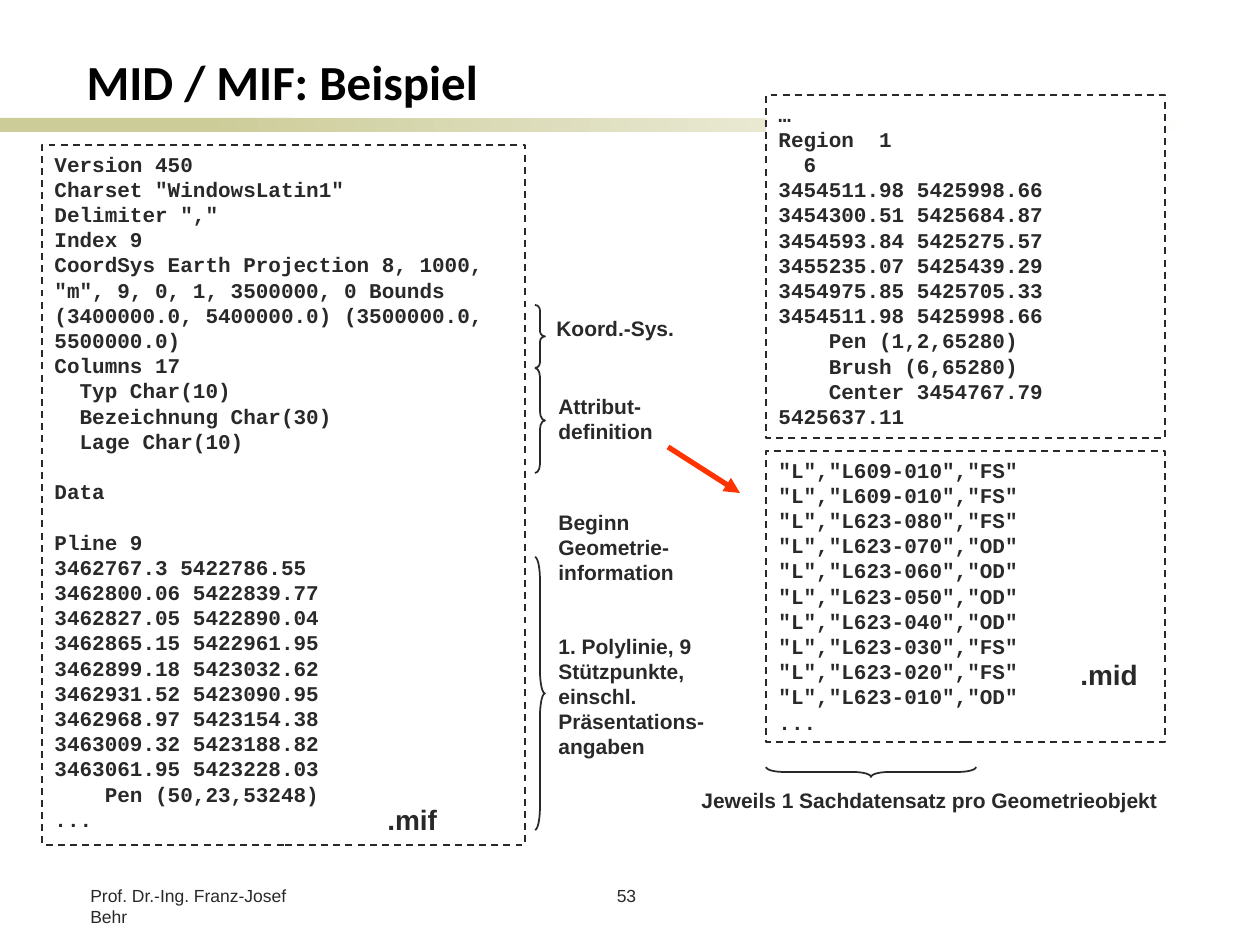
from lxml import etree
from pptx import Presentation
from pptx import util as u
from pptx.dml.color import RGBColor
from pptx.enum import dml, shapes, text
from pptx.oxml.ns import qn

PX = u.Inches(1) / 126
INK = RGBColor(0x29, 0x29, 0x29)
BLACK = RGBColor(0, 0, 0)
WHITE = RGBColor(255, 255, 255)
OLIVE = RGBColor(0xCC, 0xCC, 0x99)
RED = RGBColor(0xFF, 0x33, 0x00)

MIF_HEADER = """Version 450
Charset "WindowsLatin1"
Delimiter ","
Index 9
CoordSys Earth Projection 8, 1000, "m", 9, 0, 1, 3500000, 0 Bounds (3400000.0, 5400000.0) (3500000.0, 5500000.0)
Columns 17
  Typ Char(10)
  Bezeichnung Char(30)
  Lage Char(10)
Data
Pline 9
3462767.3 5422786.55
3462800.06 5422839.77
3462827.05 5422890.04
3462865.15 5422961.95
3462899.18 5423032.62
3462931.52 5423090.95
3462968.97 5423154.38
3463009.32 5423188.82
3463061.95 5423228.03
    Pen (50,23,53248)
..."""

MIF_REGION = """…
Region  1
  6
3454511.98 5425998.66
3454300.51 5425684.87
3454593.84 5425275.57
3455235.07 5425439.29
3454975.85 5425705.33
3454511.98 5425998.66
    Pen (1,2,65280)
    Brush (6,65280)
    Center 3454767.79 5425637.11"""

MID_RECORDS = [("609-010", "FS"), ("609-010", "FS"), ("623-080", "FS"),
               ("623-070", "OD"), ("623-060", "OD"), ("623-050", "OD"),
               ("623-040", "OD"), ("623-030", "FS"), ("623-020", "FS"),
               ("623-010", "OD")]


def emu(*lengths):
    return [round(length * PX) for length in lengths]


class SlideBuilder:
    """Holds the style and the current slide."""

    label_font, code_font, title_font = "Arial", "Courier New", "Calibri"
    body_size, leading = 12, 1.2

    def __init__(self, slide):
        self.slide = slide

    def style(self, frame, size, font, bold=True, color=INK):
        for paragraph in frame.paragraphs:
            paragraph.line_spacing = u.Pt(size * self.leading)
            for run in paragraph.runs:
                run.font.size, run.font.name = u.Pt(size), font
                run.font.bold, run.font.color.rgb = bold, color

    def title(self, words, box):
        title = self.slide.shapes.title
        title.left, title.top, title.width, title.height = emu(*box)
        frame = title.text_frame
        frame.text = words
        frame.auto_size = text.MSO_AUTO_SIZE.NONE
        frame.vertical_anchor = text.MSO_ANCHOR.BOTTOM
        frame.paragraphs[0].alignment = text.PP_ALIGN.LEFT
        self.style(frame, 28, self.title_font, color=BLACK)

    def shape(self, kind, box):
        shape = self.slide.shapes.add_shape(kind, *emu(*box))
        shape.shadow.inherit = False
        return shape

    def bar(self, box, fade=False):
        bar = self.shape(shapes.MSO_SHAPE.RECTANGLE, box)
        bar.line.fill.background()
        if fade:
            bar.fill.gradient()
            bar.fill.gradient_angle = 0
            for stop, color in zip(bar.fill.gradient_stops, (OLIVE, WHITE)):
                stop.color.rgb = color
        else:
            bar.fill.solid()
            bar.fill.fore_color.rgb = OLIVE

    def code(self, listing, box, spaced=()):
        panel = self.shape(shapes.MSO_SHAPE.RECTANGLE, box)
        panel.fill.solid()
        panel.fill.fore_color.rgb = WHITE
        panel.line.color.rgb, panel.line.width = INK, u.Pt(1)
        panel.line.dash_style = dml.MSO_LINE.DASH
        frame = panel.text_frame
        frame.text = listing
        frame.word_wrap = True
        frame.vertical_anchor = text.MSO_ANCHOR.TOP
        self.style(frame, self.body_size, self.code_font)
        for paragraph in frame.paragraphs:
            paragraph.alignment = text.PP_ALIGN.LEFT
            if paragraph.text in spaced:
                paragraph.space_before = u.Pt(self.body_size * self.leading)

    def brace(self, box, rotation=0):
        brace = self.shape(shapes.MSO_SHAPE.RIGHT_BRACE, box)
        brace.fill.background()
        brace.line.color.rgb, brace.line.width = INK, u.Pt(1)
        brace.adjustments[0] = box[3] / box[2] / 12
        brace.rotation = rotation

    def label(self, words, box, size=body_size, bold=True, wrap=True,
              align=text.PP_ALIGN.LEFT):
        frame = self.slide.shapes.add_textbox(*emu(*box)).text_frame
        frame.word_wrap = wrap
        frame.paragraphs[0].text = words
        frame.paragraphs[0].alignment = align
        self.style(frame, size, self.label_font, bold)

    def arrow(self, start, end):
        arrow = self.slide.shapes.add_connector(
            shapes.MSO_CONNECTOR.STRAIGHT, *emu(*start, *end))
        arrow.line.color.rgb, arrow.line.width = RED, u.Pt(3)
        etree.SubElement(arrow.line._get_or_add_ln(), qn("a:tailEnd"), type="triangle")
        etree.SubElement(arrow._element.spPr, qn("a:effectLst"))


def main():
    deck = Presentation()
    deck.slide_width, deck.slide_height = emu(1260, 945)
    page = SlideBuilder(deck.slides.add_slide(deck.slide_layouts[5]))

    # Title, rule and footer
    page.title("MID / MIF: Beispiel", (74, 6, 1121, 111))
    page.bar((0, 118, 294, 14))
    page.bar((199, 118, 998, 14), fade=True)
    page.label("Prof. Dr.-Ing. Franz-Josef Behr", (78, 879, 262, 44), 10, False)
    page.label("53", (427, 879, 399, 44), 10, False, align=text.PP_ALIGN.CENTER)

    # File listings
    records = [f'"L","L{number}","{kind}"' for number, kind in MID_RECORDS]
    page.code(MIF_HEADER, (42, 145, 483, 700), spaced=("Data", "Pline 9"))
    page.code("\n".join(records + ["..."]), (766, 451, 399, 291))
    page.code(MIF_REGION, (766, 95, 399, 343))
    page.label(".mif", (375, 796, 76, 47), 16, wrap=False)
    page.label(".mid", (1068, 651, 83, 47), 16, wrap=False)

    # Braces and explanations
    for top, height in ((305, 63), (368, 105), (557, 273)):
        page.brace((535, top, 10, height))
    page.brace((866, 667, 10, 210), rotation=90)
    for words, box in (
        ("Koord.-Sys.", (544, 309, 188, 38)),
        ("Attribut-definition", (546, 387, 139, 63)),
        ("Beginn\vGeometrie-information", (546, 503, 193, 88)),
        ("1. Polylinie, 9 Stützpunkte, einschl. Präsentations-angaben",
         (546, 627, 220, 139)),
        ("Jeweils 1 Sachdatensatz pro Geometrieobjekt", (689, 781, 560, 38)),
    ):
        page.label(words, box)
    page.arrow((668, 447), (740, 493))

    deck.save("out.pptx")


if __name__ == "__main__":
    main()
